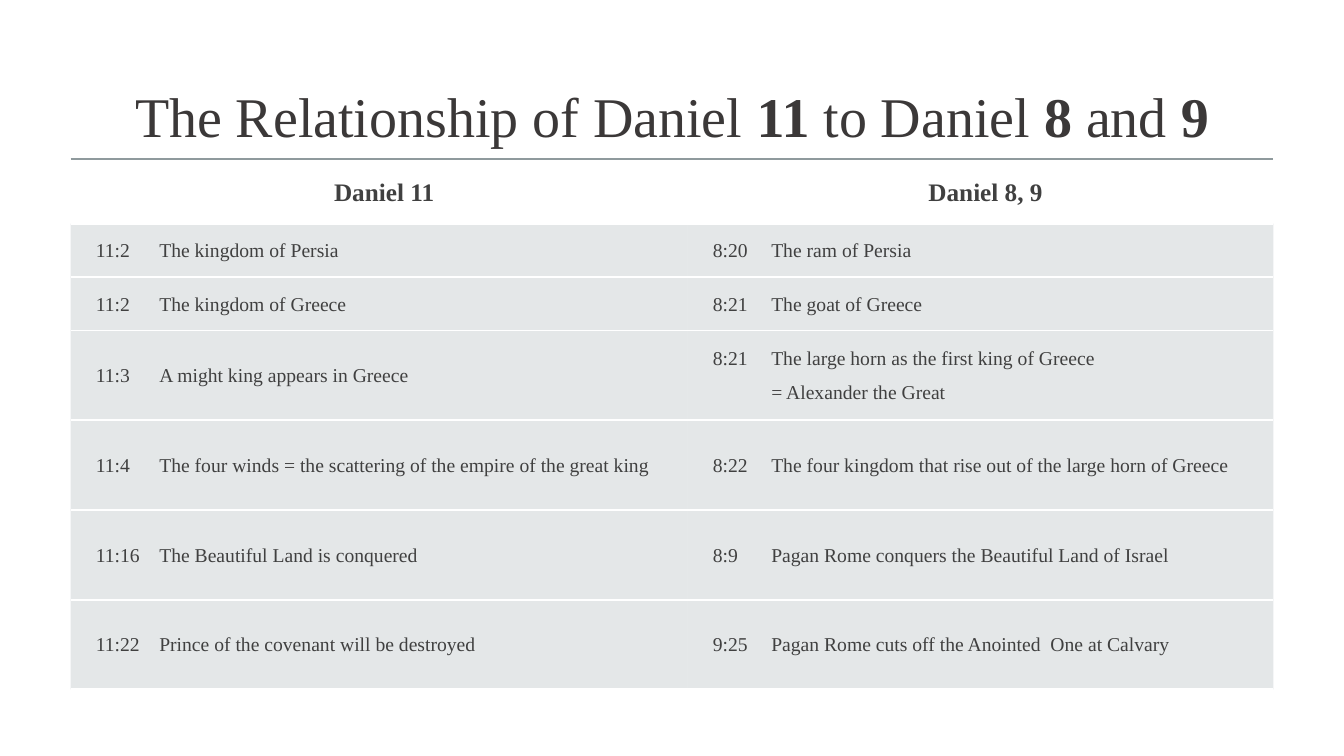
from dataclasses import dataclass

from lxml import etree
from pptx import Presentation
from pptx.dml.color import RGBColor
from pptx.enum.text import MSO_ANCHOR, MSO_AUTO_SIZE, PP_ALIGN
from pptx.oxml.ns import qn
from pptx.util import Inches, Pt

CENTER = PP_ALIGN.CENTER
LEFT = PP_ALIGN.LEFT
MIDDLE = MSO_ANCHOR.MIDDLE
NO_AUTOFIT = MSO_AUTO_SIZE.NONE
TITLE_ONLY = 5


@dataclass(frozen=True)
class Theme:
    font: str = "Times New Roman"
    title_color: str = "3B3838"
    text_color: str = "404040"
    row_fill: str = "B4BCBE"
    row_opacity: int = 35
    header_rule: str = "8F9A9D"
    row_rule: str = "FFFFFF"
    rule_width: float = 1.5
    title_size: int = 40
    header_size: int = 18
    row_size: int = 14


TITLE_SPANS = [
    ("The Relationship of Daniel ", False),
    ("11", True),
    (" to Daniel ", False),
    ("8", True),
    (" and ", False),
    ("9", True),
]
HEADERS = ["Daniel 11", "Daniel 8, 9"]
PARALLELS = [
    ("11:2\tThe kingdom of Persia", "8:20\tThe ram of Persia"),
    ("11:2\tThe kingdom of Greece", "8:21\tThe goat of Greece"),
    ("11:3\tA might king appears in Greece",
     "8:21\tThe large horn as the first king of Greece\n\t= Alexander the Great"),
    ("11:4\tThe four winds = the scattering of the empire of the great king",
     "8:22\tThe four kingdom that rise out of the large horn of Greece"),
    ("11:16\tThe Beautiful Land is conquered",
     "8:9\tPagan Rome conquers the Beautiful Land of Israel"),
    ("11:22\tPrince of the covenant will be destroyed",
     "9:25\tPagan Rome cuts off the Anointed  One at Calvary"),
]
COLUMN_WIDTHS = [6.12, 5.81]
VERSE_INDENTS = [0.63, 0.58]
ROW_HEIGHTS = [0.64] + [0.53] * 2 + [0.89] * 4


class PageBuilder:
    def __init__(self, page, theme):
        self.page = page
        self.theme = theme

    def style_font(self, font, size, color, bold=None):
        font.name = self.theme.font
        font.size = Pt(size)
        font.color.rgb = RGBColor.from_string(color)
        font.bold = bold

    def title(self, spans, left, top, width, height):
        box = self.page.shapes.title
        box.left, box.top = Inches(left), Inches(top)
        box.width, box.height = Inches(width), Inches(height)
        frame = box.text_frame
        frame.auto_size = NO_AUTOFIT
        frame.vertical_anchor = MIDDLE
        para = frame.paragraphs[0]
        para.alignment = CENTER
        para.line_spacing = 0.9
        self.style_font(para.font, self.theme.title_size, self.theme.title_color)
        for text, bold in spans:
            span = para.add_run()
            span.text = text
            span.font.bold = bold

    def borders(self, cell, top, bottom):
        properties = cell._tc.get_or_add_tcPr()
        sides = [("lnL", None), ("lnR", None), ("lnT", top), ("lnB", bottom)]
        for position, (side, color) in enumerate(sides):
            line = etree.Element(qn(f"a:{side}"), w=str(Pt(self.theme.rule_width)))
            if color:
                fill = etree.SubElement(line, qn("a:solidFill"))
                etree.SubElement(fill, qn("a:srgbClr"), val=color)
            else:
                etree.SubElement(line, qn("a:noFill"))
            properties.insert(position, line)

    def cell(self, cell, text, margin, size, bold, alignment, indent=0):
        cell.vertical_anchor = MIDDLE
        cell.margin_left = Inches(0.25)
        cell.margin_top = cell.margin_right = cell.margin_bottom = Inches(margin)
        cell.text_frame.text = text
        for para in cell.text_frame.paragraphs:
            para.alignment = alignment
            para.line_spacing = 1.07
            para.space_after = Pt(8)
            self.style_font(para.font, size, self.theme.text_color, bold)
            if indent:
                properties = para._p.get_or_add_pPr()
                properties.set("marL", str(Inches(indent)))
                properties.set("indent", str(-Inches(indent)))

    def header_cell(self, cell, text):
        theme = self.theme
        self.cell(cell, text, 0.15, theme.header_size, True, CENTER)
        cell.fill.background()
        self.borders(cell, theme.header_rule, theme.row_rule)

    def verse_cell(self, cell, text, indent):
        theme = self.theme
        self.cell(cell, text, 0.13, theme.row_size, False, LEFT, indent)
        cell.fill.solid()
        cell.fill.fore_color.rgb = RGBColor.from_string(theme.row_fill)
        color = cell._tc.tcPr.find(f"{qn('a:solidFill')}/{qn('a:srgbClr')}")
        etree.SubElement(color, qn("a:alpha"), val=str(theme.row_opacity * 1000))
        self.borders(cell, theme.row_rule, theme.row_rule)

    def table(self, headers, rows, left, top):
        frame = self.page.shapes.add_table(
            len(ROW_HEIGHTS), len(COLUMN_WIDTHS), Inches(left), Inches(top),
            Inches(sum(COLUMN_WIDTHS)), Inches(sum(ROW_HEIGHTS)))
        table = frame.table
        table.first_row = table.horz_banding = False
        for column, width in zip(table.columns, COLUMN_WIDTHS):
            column.width = Inches(width)
        for row, height in zip(table.rows, ROW_HEIGHTS):
            row.height = Inches(height)
        for column, text in enumerate(headers):
            self.header_cell(table.cell(0, column), text)
        for row, texts in enumerate(rows, start=1):
            for column, text in enumerate(texts):
                self.verse_cell(table.cell(row, column), text, VERSE_INDENTS[column])


def main():
    deck = Presentation()
    deck.slide_width, deck.slide_height = Inches(13.33), Inches(7.5)
    page = deck.slides.add_slide(deck.slide_layouts[TITLE_ONLY])
    builder = PageBuilder(page, Theme())
    builder.title(TITLE_SPANS, 0.8, 0.79, 11.73, 0.79)
    builder.table(HEADERS, PARALLELS, 0.7, 1.58)
    deck.save("out.pptx")


if __name__ == "__main__":
    main()
